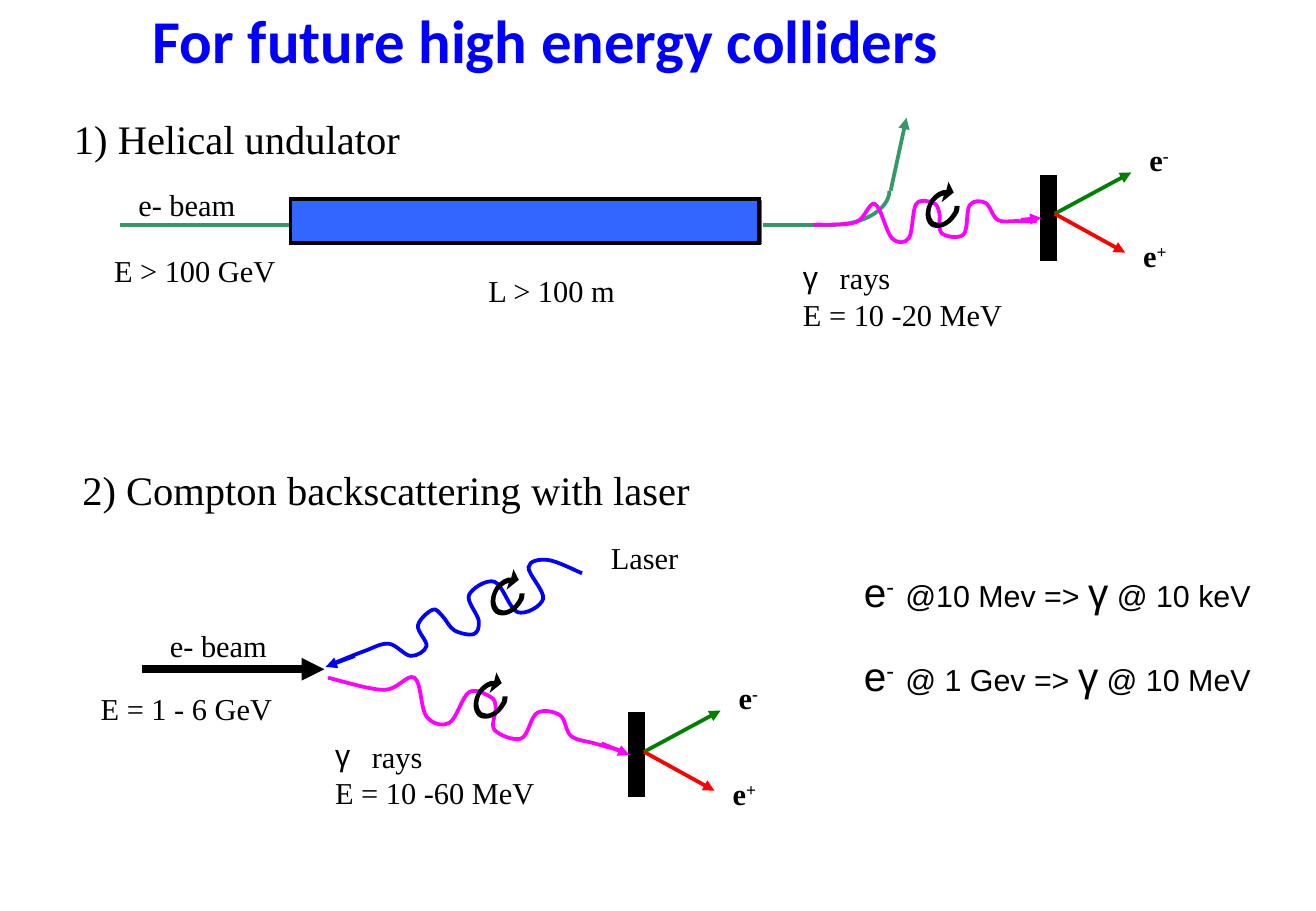
from dataclasses import dataclass

import pptx
import pptx.dml.color
import pptx.enum.shapes
import pptx.enum.text
import pptx.oxml
import pptx.oxml.ns
import pptx.util

Inches = pptx.util.Inches
RGB = pptx.dml.color.RGBColor.from_string
qn = pptx.oxml.ns.qn
SHAPE = pptx.enum.shapes.MSO_SHAPE
ANCHOR = pptx.enum.text.MSO_ANCHOR


@dataclass
class Theme:
    black: str = "000000"
    title: str = "0000FF"
    undulator: str = "3366FF"
    beam: str = "339966"
    gamma: str = "FF00FF"
    laser: str = "0000FF"
    electron: str = "008000"
    positron: str = "FF0000"
    serif: str = "Times New Roman"
    sans: str = "Arial"
    heading: str = "Calibri"
    title_size: int = 36
    head_size: int = 24
    body_size: int = 18
    thin: float = 2.25
    thick: float = 4.5


theme = Theme()
prs = pptx.Presentation()
prs.slide_width, prs.slide_height = Inches(10.83), Inches(7.5)
s = prs.slides.add_slide(prs.slide_layouts[6])


def text(paragraphs, x, y, w, h=0.4, size=theme.body_size, font=theme.serif, color=theme.black,
         bold=False, wrap=False, anchor=ANCHOR.MIDDLE, gap=0, bullet=None):
    """Each paragraph is a string or a list of (text, size, baseline) runs."""
    tf = s.shapes.add_textbox(Inches(x), Inches(y), Inches(w), Inches(h)).text_frame
    tf.word_wrap = wrap
    tf.vertical_anchor = anchor
    for i, runs in enumerate(paragraphs):
        p = tf.add_paragraph() if i else tf.paragraphs[0]
        if i and gap:
            p.space_before = pptx.util.Pt(gap)
        if bullet and i == 0:
            pPr = p._p.get_or_add_pPr()
            pPr.set("marL", str(Inches(0.24)))
            pPr.set("indent", str(-Inches(0.24)))
            for tag, name, value in [("a:buFont", "typeface", theme.sans),
                                     ("a:buChar", "char", bullet)]:
                pPr.append(pPr.makeelement(qn(tag), {name: value}))
        for words, points, baseline in [(runs, size, 0)] if isinstance(runs, str) else runs:
            r = p.add_run()
            r.text = words
            r.font.name, r.font.size, r.font.bold = font, pptx.util.Pt(points), bold
            r.font.color.rgb = RGB(color)
            if baseline:
                r._r.get_or_add_rPr().set("baseline", str(baseline * 1000))


def draw(points, color, width=theme.thin, arrow=False, smooth=False, close=False):
    """Two plain points make a connector; six numbers in a point make a cubic segment."""
    if len(points) == 2 and len(points[1]) == 2:
        sp = s.shapes.add_connector(pptx.enum.shapes.MSO_CONNECTOR.STRAIGHT,
                                    *[Inches(v) for point in points for v in point])
    else:
        start, *segments = points
        if smooth:
            knots = [start, *points, points[-1]]
            segments = [(b[0] + (c[0] - a[0]) / 6, b[1] + (c[1] - a[1]) / 6,
                         c[0] - (d[0] - b[0]) / 6, c[1] - (d[1] - b[1]) / 6, *c)
                        for a, b, c, d in zip(knots, knots[1:], knots[2:], knots[3:])]
        builder = s.shapes.build_freeform(Inches(start[0]), Inches(start[1]))
        builder.add_line_segments([(Inches(seg[-2]), Inches(seg[-1])) for seg in segments],
                                  close=close)
        sp = builder.convert_to_shape()
        sp.fill.background()
        for node, seg in zip(list(sp._element.iter(qn("a:lnTo"))), segments):
            if len(seg) == 6:
                cubic = node.makeelement(qn("a:cubicBezTo"), {})
                for x, y in zip(seg[::2], seg[1::2]):
                    cubic.append(cubic.makeelement(qn("a:pt"), {
                        "x": str(Inches(x) - sp.left), "y": str(Inches(y) - sp.top)}))
                node.getparent().replace(node, cubic)
    sp.line.color.rgb = RGB(color)
    sp.line.width = pptx.util.Pt(width)
    ln = sp.line._get_or_add_ln()
    ln.append(ln.makeelement(qn("a:miter"), {"lim": "800000"}))
    if arrow:
        ln.append(ln.makeelement(qn("a:tailEnd"), {"type": "triangle"}))
    spPr = sp._element.spPr
    spPr.append(spPr.makeelement(qn("a:effectLst"), {}))
    return sp


# Title and section headings
text(["For future high energy colliders"], 1.16, -0.03, 7.51, 0.66, size=theme.title_size,
     font=theme.heading, color=theme.title, bold=True, wrap=True, anchor=ANCHOR.TOP)
text(["1) Helical undulator"], 0.51, 0.89, 2.89, 0.5, size=theme.head_size)
text(["2) Compton backscattering with laser"], 0.58, 3.78, 5.33, 0.5, size=theme.head_size)

# Electron beam, bent away behind the undulator
draw([(0.99, 1.85), (2.4, 1.85)], theme.beam)
draw([(7.33, 1.57), (7.46, 0.97)], theme.beam, arrow=True)
draw([(6.28, 1.85), (6.88, 1.85)], theme.beam)
draw([(6.86, 1.85), (7.11, 1.85, 7.32, 1.72, 7.32, 1.57)], theme.beam)

# Compton electron beam and laser wave
draw([(1.17, 5.51), (2.67, 5.51)], theme.black, theme.thick, arrow=True)
draw([(4.79, 4.72), (4.51, 4.61), (4.35, 4.67), (4.47, 4.93), (4.26, 5.04), (4.07, 4.79),
      (3.86, 4.9), (3.94, 5.11), (3.9, 5.22), (3.74, 5.19), (3.64, 5.07), (3.56, 5.02),
      (3.44, 5.15), (3.51, 5.32), (3.38, 5.4), (3.2, 5.3), (3, 5.36), (2.75, 5.46)],
     theme.laser, smooth=True)
draw([(2.92, 5.4), (2.68, 5.49)], theme.laser, arrow=True)

# Undulator body and frame, then the two targets
boxes = []
for x, y, w, h, fill, line in [
        (2.39, 1.65, 3.88, 0.36, theme.undulator, None),
        (2.39, 1.64, 3.86, 0.36, None, theme.black),
        (8.57, 1.46, 0.11, 0.67, theme.black, theme.black),
        (5.18, 5.88, 0.11, 0.67, theme.black, theme.black)]:
    sp = s.shapes.add_shape(SHAPE.RECTANGLE, Inches(x), Inches(y), Inches(w), Inches(h))
    sp.shadow.inherit = False
    sp.fill.background()
    sp.line.fill.background()
    if fill:
        sp.fill.solid()
        sp.fill.fore_color.rgb = RGB(fill)
    if line:
        sp.line.color.rgb = RGB(line)
        sp.line.width = pptx.util.Pt(theme.thin)
        ln = sp.line._get_or_add_ln()
        ln.append(ln.makeelement(qn("a:miter"), {"lim": "800000"}))
    boxes.append(sp)

# Gamma waves, each reaching a target that emits an electron and a positron
undulator_wave = [
    (6.69, 1.85), (7.04, 1.83), (7.2, 1.68), (7.34, 1.96), (7.48, 1.96), (7.54, 1.68),
    (7.68, 1.67), (7.73, 1.75), (7.75, 1.92), (7.93, 1.93), (7.98, 1.69), (8.11, 1.67),
    (8.21, 1.81), (8.36, 1.82), (8.53, 1.82)]
compton_wave = [
    (2.7, 5.58), (3.16, 5.68), (3.41, 5.58), (3.51, 5.9), (3.7, 5.95), (3.86, 5.7),
    (4.04, 5.74), (4.08, 5.83), (4.07, 6.01), (4.29, 6.08), (4.42, 5.87), (4.61, 5.89),
    (4.7, 6.06), (4.89, 6.12), (5.11, 6.18)]
for wave, arrow_start, target, x, y in [(undulator_wave, (8.4, 1.81), boxes[2], 8.68, 1.76),
                                        (compton_wave, (4.95, 6.12), boxes[3], 5.3, 6.19)]:
    draw(wave, theme.gamma, smooth=True)
    draw([arrow_start, (x - 0.11, y + 0.03)], theme.gamma, arrow=True).end_connect(target, 1)
    for color, dx, dy, sign, label_x, label_y, label_w in [
            (theme.electron, 0.63, -0.34, "-", 0.68, -0.65, 0.37),
            (theme.positron, 0.58, 0.32, "+", 0.63, 0.14, 0.41)]:
        draw([(x, y), (x + dx, y + dy)], color, arrow=True)
        text([[("e", theme.body_size, 0), (sign, theme.body_size, 30)]],
             x + label_x, y + label_y, label_w, bold=True)

# Circular polarisation arrows, measured from their upper left corner
spin = [(0.19, 0.09), (0.15, 0.09, 0.11, 0.11, 0.07, 0.16), (0.03, 0.22, 0.03, 0.3, 0.08, 0.34),
        (0.13, 0.37, 0.2, 0.34, 0.24, 0.28), (0.26, 0.26, 0.27, 0.23, 0.27, 0.21), (0.28, 0.21),
        (0.28, 0.23, 0.27, 0.26, 0.25, 0.28), (0.2, 0.35, 0.12, 0.38, 0.07, 0.35),
        (0.02, 0.31, 0.02, 0.23, 0.07, 0.15), (0.1, 0.11, 0.15, 0.07, 0.2, 0.08),
        (0.21, 0.04), (0.23, 0.08), (0.18, 0.12)]
for corner in [(7.6, 1.5), (4.02, 4.69), (3.88, 5.54)]:
    draw([[v + corner[i % 2] for i, v in enumerate(point)] for point in spin],
         theme.black, close=True)

# Labels
for words, x, y, w in [("e- beam", 1.04, 1.48, 1), ("E > 100 GeV", 0.84, 2.03, 1.53),
                       ("L > 100 m", 3.92, 2.19, 1.25), ("Laser", 4.93, 4.39, 0.76),
                       ("e- beam", 1.3, 5.11, 1), ("E = 1 - 6 GeV", 0.73, 5.63, 1.61)]:
    text([words], x, y, w)
for energy, x, y, h in [("E = 10 -20 MeV", 6.51, 2.01, 0.85),
                        ("E = 10 -60 MeV", 2.66, 6.02, 0.71)]:
    text([" rays", energy], x, y, 2.2, h, wrap=True, bullet="γ")

# Beam energy and resulting photon energy
big, small = theme.head_size, theme.body_size
text([[("e", big, 0), ("-", big, 30), (" ", big, 0), (beam, small, 0), ("γ", big, 0),
       (photon, small, 0)]
      for beam, photon in [("@10 Mev => ", " @ 10 keV"), ("@ 1 Gev => ", " @ 10 MeV")]],
     7.01, 4.62, 3.62, 1.21, font=theme.sans, wrap=True, anchor=ANCHOR.TOP, gap=21)

prs.save("out.pptx")
